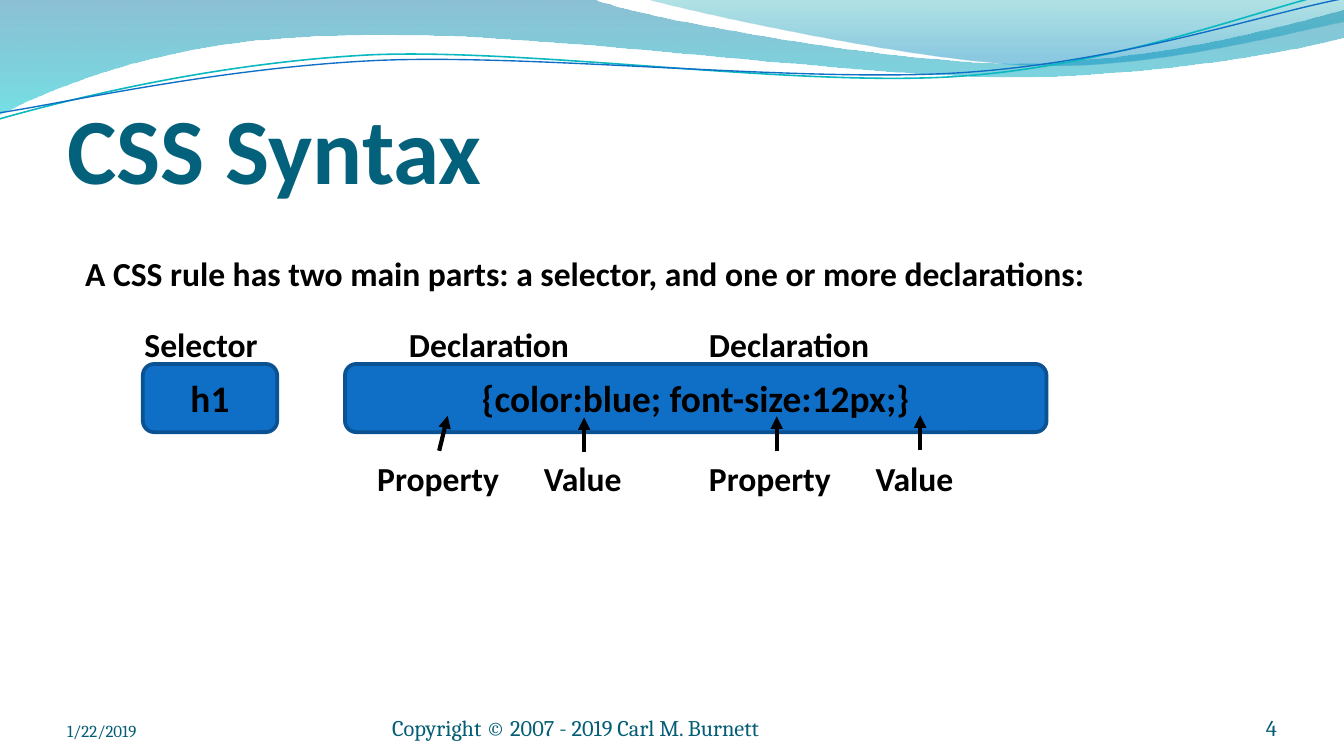
from typing import NamedTuple

from lxml import etree
from pptx import Presentation
from pptx.dml.color import RGBColor
from pptx.enum.shapes import MSO_CONNECTOR, MSO_SHAPE
from pptx.enum.text import MSO_ANCHOR, MSO_AUTO_SIZE, PP_ALIGN
from pptx.oxml.ns import qn
from pptx.util import Cm, Pt

LEFT, CENTER, RIGHT = PP_ALIGN.LEFT, PP_ALIGN.CENTER, PP_ALIGN.RIGHT
TOP, MIDDLE, BOTTOM = MSO_ANCHOR.TOP, MSO_ANCHOR.MIDDLE, MSO_ANCHOR.BOTTOM
ROUNDED, STRAIGHT = MSO_SHAPE.ROUNDED_RECTANGLE, MSO_CONNECTOR.STRAIGHT
NO_FIT = MSO_AUTO_SIZE.NONE
TITLE_ONLY = 5
STROKE_TILT = 357.3
BLACK, BLUE, NAVY, TEAL, FOOTER_TEAL = "000000", "0F6FC6", "0B5292", "04617B", "045D75"


class Stop(NamedTuple):
    position: float
    color: str
    opacity: int


class Wave(NamedTuple):
    start: tuple
    segments: list
    stops: list


class Stroke(NamedTuple):
    start: tuple
    segments: list
    color: str
    width: float


class Label(NamedTuple):
    text: str
    left: float
    top: float
    width: float


class Box(NamedTuple):
    text: str
    left: float
    width: float


class Arrow(NamedTuple):
    x1: float
    y1: float
    x2: float
    y2: float


class Footer(NamedTuple):
    text: str
    left: float
    width: float
    size: int
    align: PP_ALIGN


WAVES = [
    Wave((0, 0), [
        [(11.18, -0.03)],
        [(12.09, 0.33), (16.87, 1.19), (19.25, 1.19)],
        [(21.67, 1.19), (24.33, 0.48), (25.4, 0.18)],
        [(25.43, 0.69)],
        [(24.97, 0.84), (22.1, 1.45), (18.95, 1.45)],
        [(15.8, 1.42), (9.7, 0.53), (6.53, 0.66)],
        [(3.28, 0.69), (1.17, 1.57), (-0.03, 2.16)],
        [(0, 0)],
    ], [Stop(0, "0074A1", 45), Stop(1, "00C6CF", 55)]),
    Wave((12.17, -0.03), [
        [(12.93, 0.2), (17.32, 1.17), (19.53, 1.24)],
        [(21.74, 1.32), (24.41, 0.61), (25.4, 0.41)],
        [(25.4, 0)],
        [(12.17, -0.03)],
    ], [Stop(0, "00A1A9", 30), Stop(0.8, "008BBF", 45)]),
]
STROKES = [
    Stroke((-0.05, 1.65), [
        [(1.2, 1.36), (4.01, 0.78), (7.04, 0.77)],
        [(10.06, 0.79), (15.01, 1.76), (18.06, 1.7)],
        [(21.13, 1.64), (23.88, 0.68), (25.4, 0.42)],
    ], "0AB8BF", 0.85),
    Stroke((-0.03, 1.53), [
        [(1.17, 1.41), (4.17, 0.87), (7.19, 0.88)],
        [(10.24, 0.9), (15.14, 1.69), (18.19, 1.63)],
        [(21.23, 1.57), (23.93, 0.78), (25.45, 0.57)],
    ], BLUE, 0.75),
]
FOOTERS = [
    Footer("1/22/2019", 1.27, 5.92, 9, LEFT),
    Footer("Copyright © 2007 - 2019 Carl M. Burnett", 7.41, 9.32, 12, LEFT),
    Footer("4", 22.02, 2.11, 12, RIGHT),
]
BOXES = [Box("h1", 2.7, 2.54), Box("{color:blue; font-size:12px;}", 6.52, 13.26)]
LABELS = [
    Label("A CSS rule has two main parts: a selector, and one or more declarations:",
          1.36, 4.65, 19.56),
    Label("Selector", 2.48, 5.99, 2.67),
    Label("Declaration", 7.48, 5.99, 3.56),
    Label("Declaration", 13.15, 5.99, 3.56),
    Label("Property", 6.88, 8.53, 2.84),
    Label("Value", 10.03, 8.53, 1.98),
    Label("Property", 13.15, 8.53, 2.84),
    Label("Value", 16.3, 8.53, 1.98),
]
ARROWS = [
    Arrow(8.3, 8.52, 8.46, 7.86),
    Arrow(11.04, 8.55, 11.04, 7.89),
    Arrow(14.68, 8.53, 14.68, 7.87),
    Arrow(17.39, 8.51, 17.39, 7.85),
]


def rgb(value: str) -> RGBColor:
    return RGBColor.from_string(value)


def set_text(sp, text: str, size: int, color: str = BLACK, font: str = "Calibri",
             bold: bool = True, align: PP_ALIGN = LEFT, anchor: MSO_ANCHOR = TOP) -> None:
    tf = sp.text_frame
    tf.text, tf.vertical_anchor = text, anchor
    p = tf.paragraphs[0]
    p.alignment = align
    p.font.name, p.font.size, p.font.bold = font, Pt(size), bold
    p.font.color.rgb = rgb(color)


def set_insets(tf, top: float = 0) -> None:
    tf.margin_left = tf.margin_right = tf.margin_bottom = 0
    tf.margin_top = Cm(top)


def draw_path(s, start: tuple, segments: list, close: bool):
    """Draw a freeform whose three-point segments are cubic curves."""
    builder = s.shapes.build_freeform(Cm(start[0]), Cm(start[1]))
    builder.add_line_segments([(Cm(x), Cm(y)) for seg in segments for x, y in seg], close=close)
    sp = builder.convert_to_shape()
    sp.shadow.inherit = False
    lines = iter(list(sp._element.spPr.iter(qn("a:lnTo"))))
    for seg in segments:
        first, *others = [next(lines) for _ in seg]
        if others:
            curve = etree.Element(qn("a:cubicBezTo"))
            first.addprevious(curve)
            for line in (first, *others):
                curve.append(line[0])
                line.getparent().remove(line)
    return sp


def draw_wave(s, wave: Wave) -> None:
    sp = draw_path(s, wave.start, wave.segments, True)
    sp.line.fill.background()
    sp.fill.gradient()
    sp.fill.gradient_angle = 270
    for target, stop in zip(sp.fill.gradient_stops, wave.stops):
        target.position, target.color.rgb = stop.position, rgb(stop.color)
    for clr, stop in zip(sp._element.spPr.iter(qn("a:srgbClr")), wave.stops):
        etree.SubElement(clr, qn("a:alpha"), val=str(stop.opacity * 1000))


def draw_stroke(s, stroke: Stroke) -> None:
    sp = draw_path(s, stroke.start, stroke.segments, False)
    sp.rotation = STROKE_TILT
    sp.fill.background()
    sp.line.color.rgb, sp.line.width = rgb(stroke.color), Pt(stroke.width)


def draw_title(s, text: str) -> None:
    sp = s.shapes.title
    sp.left, sp.top, sp.width, sp.height = Cm(1.27), Cm(1.46), Cm(22.86), Cm(2.39)
    set_text(sp, text, 50, TEAL, anchor=BOTTOM)
    set_insets(sp.text_frame, 0.13)
    sp.text_frame.auto_size = NO_FIT


def draw_footer(s, footer: Footer) -> None:
    sp = s.shapes.add_textbox(Cm(footer.left), Cm(13.24), Cm(footer.width), Cm(0.76))
    set_text(sp, footer.text, footer.size, FOOTER_TEAL, "Cambria", False, footer.align, BOTTOM)
    set_insets(sp.text_frame)
    sp.text_frame.word_wrap = True


def draw_box(s, box: Box) -> None:
    sp = s.shapes.add_shape(ROUNDED, Cm(box.left), Cm(6.88), Cm(box.width), Cm(1.29))
    sp.shadow.inherit = False
    sp.fill.solid()
    sp.fill.fore_color.rgb = rgb(BLUE)
    sp.line.color.rgb, sp.line.width = rgb(NAVY), Pt(2)
    set_text(sp, box.text, 20, align=CENTER, anchor=MIDDLE)


def draw_label(s, label: Label) -> None:
    sp = s.shapes.add_textbox(Cm(label.left), Cm(label.top), Cm(label.width), Cm(1.02))
    set_text(sp, label.text, 18)
    sp.text_frame.word_wrap = False


def draw_arrow(s, arrow: Arrow) -> None:
    sp = s.shapes.add_connector(STRAIGHT, *(Cm(v) for v in arrow))
    sp.line.color.rgb, sp.line.width = rgb(BLACK), Pt(2.25)
    etree.SubElement(sp.line._get_or_add_ln(), qn("a:tailEnd"), type="triangle")
    etree.SubElement(sp._element.spPr, qn("a:effectLst"))


def main() -> None:
    prs = Presentation()
    prs.slide_width, prs.slide_height = Cm(25.4), Cm(14.29)
    s = prs.slides.add_slide(prs.slide_layouts[TITLE_ONLY])
    draw_title(s, "CSS Syntax")
    for draw, items in ((draw_wave, WAVES), (draw_stroke, STROKES), (draw_footer, FOOTERS),
                        (draw_box, BOXES), (draw_label, LABELS), (draw_arrow, ARROWS)):
        for item in items:
            draw(s, item)
    prs.save("out.pptx")


if __name__ == "__main__":
    main()
